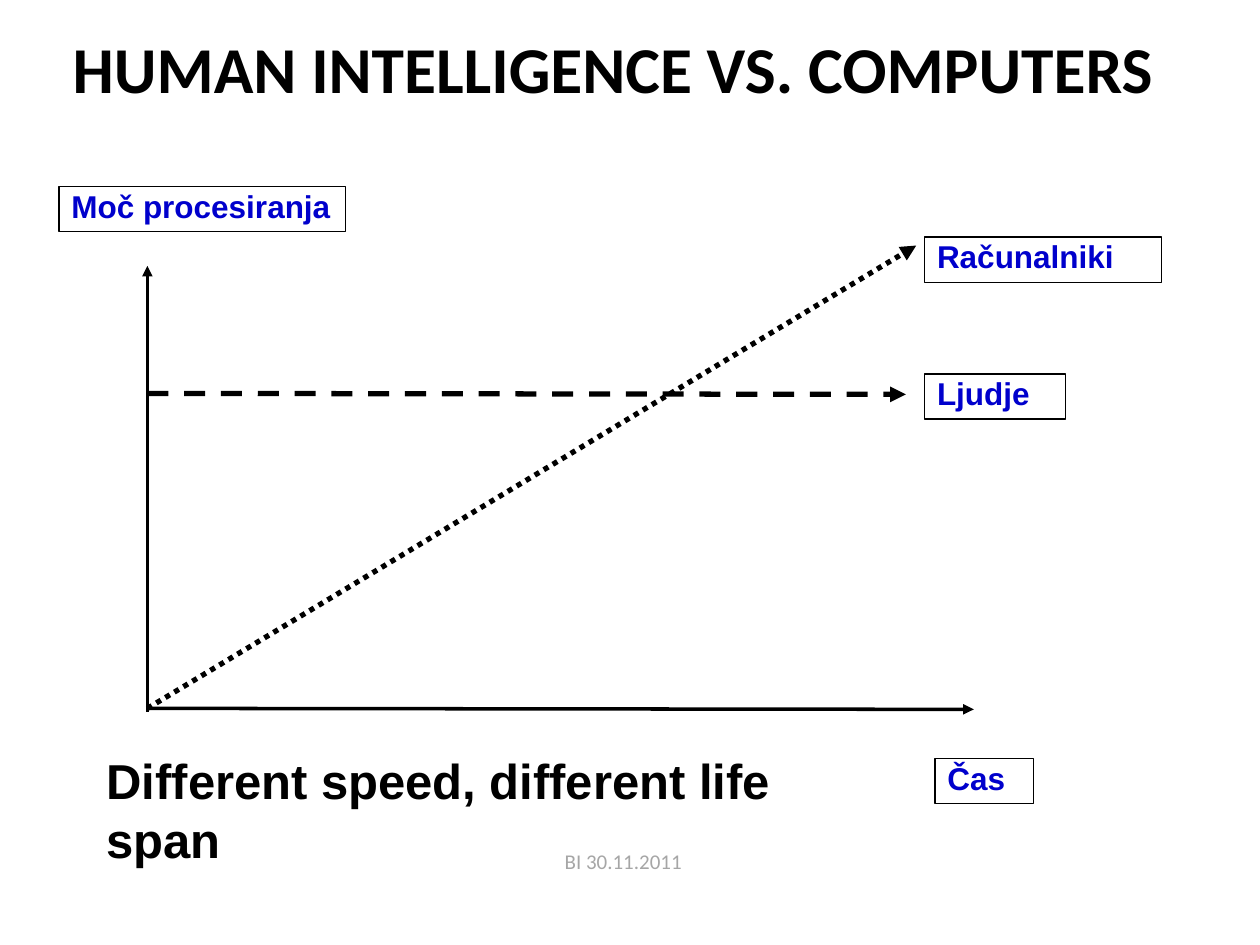
import pptx
import pptx.util
import pptx.dml.color
import pptx.enum.dml
import pptx.enum.shapes
import pptx.enum.text
import pptx.oxml
import pptx.oxml.ns

Cm, Pt = pptx.util.Cm, pptx.util.Pt
ALIGN = pptx.enum.text.PP_ALIGN
ANCHOR = pptx.enum.text.MSO_ANCHOR
DASH = pptx.enum.dml.MSO_LINE

TEXTS = [
    ("Different speed, different life span", (1.9, 15.01, 14.73, 2.64), "Arial", 28, "000000", True, ALIGN.LEFT, ANCHOR.TOP, True),
    ("HUMAN INTELLIGENCE VS. COMPUTERS ", (1.09, 0, 22.86, 2.72), "Calibri", 37.4, "000000", True, ALIGN.CENTER, ANCHOR.MIDDLE, True),
    ("BI 30.11.2011", (7.14, 16.99, 10.85, 1.32), "Calibri", 12, "A6A6A6", False, ALIGN.CENTER, ANCHOR.TOP, False),
]
LABEL_H = 0.91
LABELS = [
    ("Moč procesiranja", 1.19, 3.76, 5.77),
    ("Čas ", 18.85, 15.29, 1.98),
    ("Ljudje ", 18.64, 7.54, 2.84),
    ("Računalniki ", 18.64, 4.78, 4.78),
]
AXIS_X, AXIS_Y = 2.97, 14.28
ARROWS = [
    ((AXIS_X, AXIS_Y), (19.63, 14.3), 2, None),
    ((AXIS_X, AXIS_Y), (18.47, 4.95), 3, DASH.ROUND_DOT),
    ((AXIS_X, 7.93), (18.26, 7.95), 3, DASH.DASH),
    ((AXIS_X, 14.35), (AXIS_X, 5.36), 2, None),
]


def color(value):
    return pptx.dml.color.RGBColor.from_string(value)


def write(sp, text, font, size, ink, bold, align, anchor, wrap):
    tf = sp.text_frame
    tf.word_wrap = wrap
    tf.vertical_anchor = anchor
    p = tf.paragraphs[0]
    p.text = text
    p.alignment = align
    p.font.name, p.font.size, p.font.bold = font, Pt(size), bold
    p.font.color.rgb = color(ink)
    return p


def add_label(s, text, x, y, w):
    sp = s.shapes.add_shape(pptx.enum.shapes.MSO_SHAPE.RECTANGLE, Cm(x), Cm(y), Cm(w), Cm(LABEL_H))
    sp.shadow.inherit = False
    sp.fill.solid()
    sp.fill.fore_color.rgb = color("FFFFFF")
    sp.line.color.rgb = color("000000")
    sp.line.width = Pt(0.75)
    p = write(sp, text, "Arial", 18, "0000CC", True, ALIGN.JUSTIFY, ANCHOR.TOP, True)
    p.line_spacing = 0.85
    p.space_before = Pt(1)


def add_arrow(s, start, end, width, dash):
    points = [Cm(v) for v in start + end]
    sp = s.shapes.add_connector(pptx.enum.shapes.MSO_CONNECTOR.STRAIGHT, *points)
    sp.line.color.rgb = color("000000")
    sp.line.width = Pt(width)
    if dash:
        sp.line.dash_style = dash
    tail = pptx.oxml.parse_xml(f'<a:tailEnd {pptx.oxml.ns.nsdecls("a")} type="triangle"/>')
    sp.line._get_or_add_ln().append(tail)
    effects = pptx.oxml.parse_xml(f'<a:effectLst {pptx.oxml.ns.nsdecls("a")}/>')
    sp._element.spPr.append(effects)


def main():
    prs = pptx.Presentation()
    prs.slide_width, prs.slide_height = Cm(25.4), Cm(19.05)
    s = prs.slides.add_slide(prs.slide_layouts[6])
    for arrow in ARROWS:
        add_arrow(s, *arrow)
    for label in LABELS:
        add_label(s, *label)
    for text, box, *style in TEXTS:
        sp = s.shapes.add_textbox(*[Cm(v) for v in box])
        write(sp, text, *style)
    prs.save("out.pptx")


if __name__ == "__main__":
    main()
